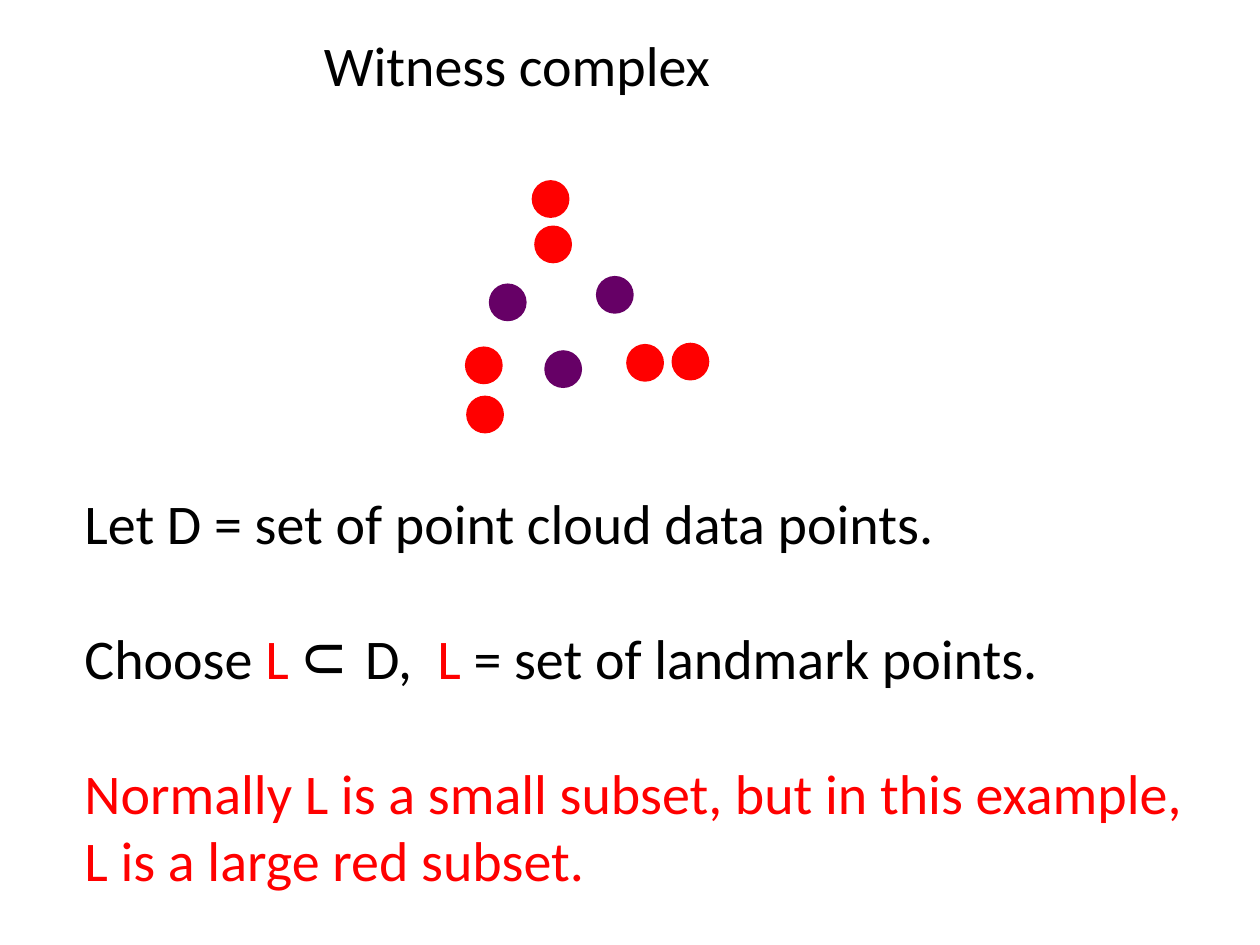
import dataclasses
import lxml.etree
import pptx
import pptx.dml.color
import pptx.enum.shapes
import pptx.enum.text
import pptx.oxml.ns
import pptx.util

Inches = pptx.util.Inches
COLORS = {"text": "000000", "landmark": "FF0000", "other": "660066"}
DOT_SIZE = 0.3
PARAGRAPH_GAP = 38.5
SIGN_GAP = 36.2
COMMA_GAP = 7.2


@dataclasses.dataclass
class DataPoint:
    left: float
    top: float
    role: str = "landmark"


@dataclasses.dataclass
class Phrase:
    text: str
    role: str = "text"
    spacing: float = 0


DATA_POINTS = [
    DataPoint(3.69, 2.75),
    DataPoint(4.97, 2.73),
    DataPoint(4.24, 1.79),
    DataPoint(4.32, 2.78, "other"),
    DataPoint(3.88, 2.25, "other"),
    DataPoint(5.33, 2.72),
    DataPoint(4.73, 2.19, "other"),
    DataPoint(4.22, 1.43),
    DataPoint(3.7, 3.14),
]

STATEMENTS = [
    [Phrase("Let D = set of point cloud data points.")],
    [
        Phrase("Choose "),
        Phrase("L", "landmark"),
        Phrase(" ", spacing=SIGN_GAP),
        Phrase("D,"),
        Phrase(" ", spacing=COMMA_GAP),
        Phrase("L", "landmark"),
        Phrase(" = set of landmark points."),
    ],
    [Phrase("Normally L is a small subset, but in this example, L is a large red subset.", "landmark")],
]


def rgb(role: str) -> pptx.dml.color.RGBColor:
    return pptx.dml.color.RGBColor.from_string(COLORS[role])


def place(shape, left: float, top: float, width: float, height: float) -> None:
    shape.left, shape.top = Inches(left), Inches(top)
    shape.width, shape.height = Inches(width), Inches(height)


def prepare_frame(shape):
    frame = shape.text_frame
    frame.word_wrap = True
    frame.auto_size = pptx.enum.text.MSO_AUTO_SIZE.NONE
    frame.vertical_anchor = pptx.enum.text.MSO_ANCHOR.TOP
    return frame


def write(
    paragraph, text: str, *, role: str = "text", size: int = 32, font: str = "Calibri", spacing: float = 0
) -> None:
    run = paragraph.add_run()
    run.text = text
    run.font.name = font
    run.font.size = pptx.util.Pt(size)
    run.font.color.rgb = rgb(role)
    if spacing:
        run.font._element.set("spc", str(round(spacing * 100)))
    paragraph.alignment = pptx.enum.text.PP_ALIGN.LEFT


def remove_bullet(paragraph) -> None:
    properties = paragraph._p.get_or_add_pPr()
    properties.set("marL", "0")
    properties.set("indent", "0")
    lxml.etree.SubElement(properties, pptx.oxml.ns.qn("a:buNone"))


def draw_point(cloud, point: DataPoint) -> None:
    dot = cloud.shapes.add_shape(
        pptx.enum.shapes.MSO_SHAPE.OVAL,
        Inches(point.left), Inches(point.top), Inches(DOT_SIZE), Inches(DOT_SIZE),
    )
    dot.shadow.inherit = False
    dot.fill.solid()
    dot.fill.fore_color.rgb = rgb(point.role)
    dot.line.fill.background()


def write_statements(body) -> None:
    frame = prepare_frame(body)
    for index, statement in enumerate(STATEMENTS):
        paragraph = frame.add_paragraph() if index else frame.paragraphs[0]
        paragraph.space_before = pptx.util.Pt(PARAGRAPH_GAP if index else 0)
        remove_bullet(paragraph)
        for phrase in statement:
            write(paragraph, phrase.text, role=phrase.role, spacing=phrase.spacing)


def main() -> None:
    deck = pptx.Presentation()
    deck.slide_width, deck.slide_height = Inches(10), Inches(7.5)
    slide = deck.slides.add_slide(deck.slide_layouts[1])

    title = slide.shapes.title
    place(title, 2.47, 0.19, 4.28, 0.64)
    write(prepare_frame(title).paragraphs[0], "Witness complex")

    body = slide.placeholders[1]
    place(body, 0.57, 3.83, 9.08, 3.33)
    write_statements(body)

    subset_sign = slide.shapes.add_textbox(Inches(2.42), Inches(4.86), Inches(0.37), Inches(0.64))
    subset_sign.rotation = 90
    write(prepare_frame(subset_sign).paragraphs[0], "U")

    cloud = slide.shapes.add_group_shape()
    for point in DATA_POINTS:
        draw_point(cloud, point)

    deck.save("out.pptx")


if __name__ == "__main__":
    main()
